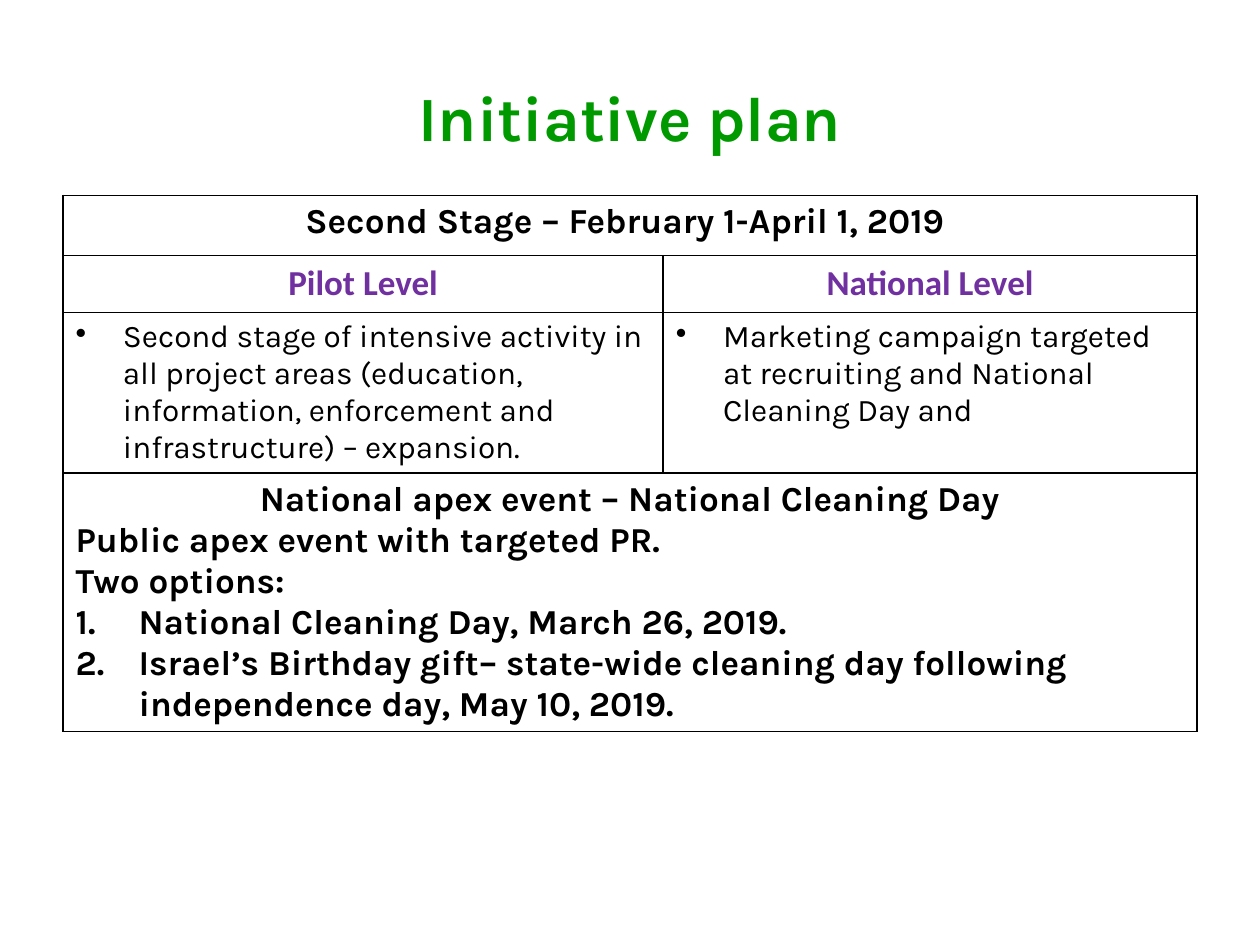
from dataclasses import dataclass
from typing import Optional

from pptx import Presentation
from pptx.dml.color import RGBColor
from pptx.enum import text as t
from pptx.oxml import parse_xml
from pptx.oxml.ns import nsdecls
from pptx.util import Pt

MID = t.PP_ALIGN.CENTER
LEFT = t.PP_ALIGN.LEFT


@dataclass
class Line:
    words: str
    size: float = 20
    bold: bool = True
    font: str = "Karla"
    color: str = "000000"
    align: t.PP_ALIGN = LEFT
    rtl: bool = False
    after: float = 0
    indent: float = 0
    mark: Optional[str] = None


@dataclass
class Cell:
    row: int
    col: int
    lines: list[Line]
    wide: bool = False


DOT = '<a:buChar {} char="•"/>'
NUM = '<a:buAutoNum {} type="arabicPeriod"/>'


def level(words: str, rtl: bool = False) -> Line:
    return Line(words, font="Calibri", color="7030A0", align=MID, rtl=rtl)


def point(words: str) -> Line:
    return Line(words, size=18, bold=False, indent=27, mark=DOT)


def option(words: str) -> Line:
    return Line(words, indent=36, mark=NUM)


TITLE = Line("Initiative plan", size=36, color="009900", align=MID, rtl=True)
COLS = [343, 305]
ROWS = [34.5, 32.5, 73.5, 141]
CELLS = [
    Cell(0, 0, [Line(" Second Stage – February 1-April 1, 2019",
                     align=MID, rtl=True, after=6)], wide=True),
    Cell(1, 0, [level("Pilot Level")]),
    Cell(1, 1, [level("National Level", rtl=True)]),
    Cell(2, 0, [point("Second stage of intensive activity in all project areas "
                      "(education, information, enforcement and "
                      "infrastructure) – expansion.")]),
    Cell(2, 1, [point("Marketing campaign targeted at recruiting and "
                      "National Cleaning Day and")]),
    Cell(3, 0, [
        Line("National apex event – National Cleaning Day", align=MID),
        Line("Public apex event with targeted PR."),
        Line("Two options:"),
        option("National Cleaning Day, March 26, 2019."),
        option("Israel’s Birthday gift– state-wide cleaning day following "
               "independence day, May 10, 2019."),
    ], wide=True),
]


def paint(color: str) -> RGBColor:
    return RGBColor.from_string(color)


def write(frame, lines: list[Line]) -> None:
    for i, line in enumerate(lines):
        para = frame.paragraphs[0] if i == 0 else frame.add_paragraph()
        para.alignment = line.align
        para.space_before = Pt(0)
        para.space_after = Pt(line.after)
        props = para._p.get_or_add_pPr()
        if line.rtl:
            props.set("rtl", "1")
        if line.mark:
            props.set("marL", str(Pt(line.indent)))
            props.set("indent", str(-Pt(line.indent)))
            props.append(parse_xml(line.mark.format(nsdecls("a"))))
        run = para.add_run()
        run.text = line.words
        run.font.size = Pt(line.size)
        run.font.bold = line.bold
        run.font.name = line.font
        run.font.color.rgb = paint(line.color)


def border(cell, color: str, width: float) -> None:
    props = cell._tc.get_or_add_tcPr()
    for i, side in enumerate(("lnL", "lnR", "lnT", "lnB")):
        props.insert(i, parse_xml(
            f'<a:{side} {nsdecls("a")} w="{Pt(width)}"><a:solidFill>'
            f'<a:srgbClr val="{color}"/></a:solidFill></a:{side}>'))


def build_plan(slide) -> None:
    table = slide.shapes.add_table(
        len(ROWS), len(COLS), Pt(36), Pt(111.6),
        Pt(sum(COLS)), Pt(sum(ROWS))).table
    table.first_row = False
    table.horz_banding = False
    for col, width in zip(table.columns, COLS):
        col.width = Pt(width)
    for row, height in zip(table.rows, ROWS):
        row.height = Pt(height)
    for cell in table.iter_cells():
        cell.fill.background()
        border(cell, "000000", 1)
    for item in CELLS:
        cell = table.cell(item.row, item.col)
        if item.wide:
            cell.merge(table.cell(item.row, len(COLS) - 1))
        write(cell.text_frame, item.lines)


def main() -> None:
    deck = Presentation()
    deck.slide_width, deck.slide_height = Pt(720), Pt(540)
    slide = deck.slides.add_slide(deck.slide_layouts[5])
    title = slide.shapes.title
    title.left, title.top = Pt(36), Pt(21.6)
    title.width, title.height = Pt(648), Pt(90)
    title.text_frame.vertical_anchor = t.MSO_ANCHOR.MIDDLE
    write(title.text_frame, [TITLE])
    build_plan(slide)
    deck.save("out.pptx")


if __name__ == "__main__":
    main()
